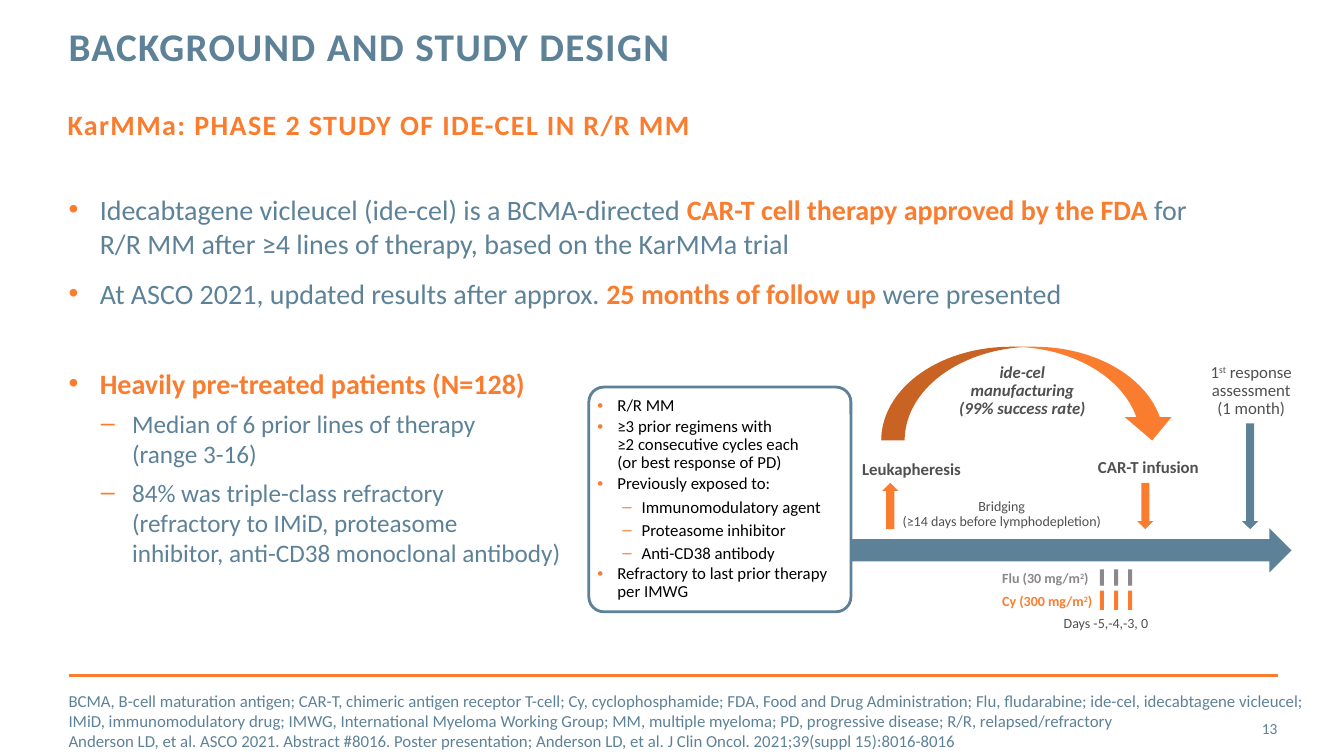
import pptx
import pptx.util
import pptx.dml.color
import pptx.enum.shapes
import pptx.enum.text
import pptx.oxml.ns
import lxml.etree

Inches, Pt = pptx.util.Inches, pptx.util.Pt
RGBColor = pptx.dml.color.RGBColor
SHAPE = pptx.enum.shapes.MSO_SHAPE
ALIGN = pptx.enum.text.PP_ALIGN
MIDDLE = pptx.enum.text.MSO_ANCHOR.MIDDLE
qn = pptx.oxml.ns.qn

BLUE = RGBColor(0x5D, 0x82, 0x98)
ORANGE = RGBColor(0xFA, 0x7C, 0x2E)
DARK = RGBColor(0x50, 0x50, 0x50)
GREY = RGBColor(0x8B, 0x87, 0x8B)
BLACK = RGBColor(0, 0, 0)
WHITE = RGBColor(255, 255, 255)

deck = pptx.Presentation()
deck.slide_width, deck.slide_height = Inches(13.33), Inches(7.5)
page = deck.slides.add_slide(deck.slide_layouts[6])


def write(target, text, size=12, color=DARK, bold=False, italic=False, spacing=None,
          align=ALIGN.LEFT, line=None, before=0, bullet=None, indent=0, hang=0,
          anchor=None, inset=0):
    """Add a paragraph to a shape, or to a new text box if target is (left, top, width, height).

    In text, *stars* enclose bold orange words, ^carets^ enclose superscripts.
    """
    if isinstance(target, tuple):
        target = page.shapes.add_textbox(*map(Inches, target))
    frame = target.text_frame
    para = frame.paragraphs[0]
    if para.runs:
        para = frame.add_paragraph()
    else:
        frame.word_wrap = True
        frame.margin_left = frame.margin_right = Inches(inset)
        frame.margin_top = frame.margin_bottom = Inches(inset)
        if anchor is not None:
            frame.vertical_anchor = anchor
    para.alignment = align
    para.space_before = Pt(before)
    if line:
        para.line_spacing = line
    if bullet:
        props = para._p.get_or_add_pPr()
        props.set("marL", str(Inches(indent)))
        props.set("indent", str(-Inches(hang)))
        tint = lxml.etree.SubElement(props, qn("a:buClr"))
        lxml.etree.SubElement(tint, qn("a:srgbClr"), val=str(ORANGE))
        lxml.etree.SubElement(props, qn("a:buFont"), typeface="Arial")
        lxml.etree.SubElement(props, qn("a:buChar"), char=bullet)

    for i, star_part in enumerate(text.split("*")):
        for j, part in enumerate(star_part.split("^")):
            for k, words in enumerate(part.split("\n")):
                if k:
                    para.add_line_break()
                if not words:
                    continue
                span = para.add_run()
                span.text = words
                font = span.font
                font.name, font.size, font.italic = "Calibri", Pt(size), italic
                font.bold = bold or i % 2 == 1
                font.color.rgb = ORANGE if i % 2 else color
                if spacing:
                    span._r.get_or_add_rPr().set("spc", str(spacing * 100))
                if j % 2:
                    span._r.get_or_add_rPr().set("baseline", "30000")
    return target


def add_block(kind, left, top, width, height, fill):
    block = page.shapes.add_shape(kind, *map(Inches, (left, top, width, height)))
    block.shadow.inherit = False
    block.fill.solid()
    block.fill.fore_color.rgb = fill
    block.line.fill.background()
    return block


# Headings and footer
rule = page.shapes.add_connector(pptx.enum.shapes.MSO_CONNECTOR.STRAIGHT, Inches(0.68),
                                 Inches(6.7), Inches(12.68), Inches(6.7))
rule.line.color.rgb = ORANGE
rule.line.width = Pt(2)
lxml.etree.SubElement(rule._element.spPr, qn("a:effectLst"))

write((0.68, 0.27, 9.56, 0.57), "BACKGROUND AND STUDY DESIGN", size=28, color=BLUE,
      bold=True, spacing=1, line=Pt(30))
write((0.67, 1.07, 12, 0.77), "KarMMa: PHASE 2 STUDY OF IDE-CEL IN R/R MM", size=20,
      color=ORANGE, bold=True, spacing=1)
write((11.81, 7.03, 0.86, 0.4), "13", size=11, color=BLUE, align=ALIGN.RIGHT, anchor=MIDDLE)
footer = write(
    (0.68, 6.95, 12.4, 0.4),
    "BCMA, B-cell maturation antigen; CAR-T, chimeric antigen receptor T-cell; "
    "Cy, cyclophosphamide; FDA, Food and Drug Administration; Flu, fludarabine; "
    "ide-cel, idecabtagene vicleucel; IMiD, immunomodulatory drug; "
    "IMWG, International Myeloma Working Group; MM, multiple myeloma; "
    "PD, progressive disease; R/R, relapsed/refractory", color=BLUE, anchor=MIDDLE)
write(footer, "Anderson LD, et al. ASCO 2021. Abstract #8016. Poster presentation; "
      "Anderson LD, et al. J Clin Oncol. 2021;39(suppl 15):8016-8016", color=BLUE)

# Main bullets
body = (0.68, 1.91, 12, 4.6)
for text, before in (
    ("Idecabtagene vicleucel (ide-cel) is a BCMA-directed *CAR-T cell therapy approved by "
     "the FDA *for\nR/R MM after ≥4 lines of therapy, based on the KarMMa trial", 0),
    ("At ASCO 2021, updated results after approx. *25 months of follow up *were presented", 12),
    ("*Heavily pre-treated patients (N=128)*", 40),
):
    body = write(body, text, size=20, color=BLUE, before=before, bullet="•",
                 indent=0.31, hang=0.31)
for text in (
    "Median of 6 prior lines of therapy\n(range 3-16)",
    "84% was triple-class refractory\n(refractory to IMiD, proteasome\n"
    "inhibitor, anti-CD38 monoclonal antibody)",
):
    write(body, text, size=18, color=BLUE, before=6, bullet="–", indent=0.63, hang=0.31)

# Eligibility box
criteria = add_block(SHAPE.ROUNDED_RECTANGLE, 5.84, 3.84, 2.6, 2.23, WHITE)
criteria.adjustments[0] = 0.067
criteria.line.color.rgb = BLUE
criteria.line.width = Pt(2)
top_level = dict(bullet="•", indent=0.2, hang=0.2, line=0.9)
sub_level = dict(bullet="–", indent=0.44, hang=0.19)
for number, (text, level) in enumerate((
    ("R/R MM", top_level),
    ("≥3 prior regimens with\n≥2 consecutive cycles each\n(or best response of PD)", top_level),
    ("Previously exposed to:", top_level),
    ("Immunomodulatory agent", sub_level),
    ("Proteasome inhibitor", sub_level),
    ("Anti-CD38 antibody", sub_level),
    ("Refractory to last prior therapy\nper IMWG", top_level),
)):
    write(criteria, text, color=BLACK, before=2 if number else 0, anchor=MIDDLE,
          inset=0.04, **level)

# Timeline labels
for place, text, style in (
    ((9.17, 3.61, 1.94, 0.55), "ide-cel\nmanufacturing\n(99% success rate)",
     dict(bold=True, italic=True, align=ALIGN.CENTER)),
    ((8.55, 4.57, 1.94, 0.18), "Leukapheresis", dict(bold=True)),
    ((10.89, 4.55, 1.94, 0.18), "CAR-T infusion", dict(bold=True)),
    ((11.74, 3.61, 1.34, 0.55), "1^st^ response\nassessment\n(1 month)",
     dict(align=ALIGN.CENTER)),
    ((9.94, 5.67, 0.98, 0.15), "Flu (30 mg/m^2^)", dict(size=10, color=GREY, bold=True)),
    ((9.94, 5.9, 0.98, 0.15), "Cy (300 mg/m^2^)", dict(size=10, color=ORANGE, bold=True)),
    ((10.55, 6.12, 1.19, 0.15), "Days -5,-4,-3, 0", dict(size=10)),
    ((8.91, 4.95, 2.05, 0.3), "Bridging\n(≥14 days before lymphodepletion)",
     dict(size=10, align=ALIGN.CENTER)),
):
    write(place, text, line=0.9, **style)

# Timeline arrows and dosing days
add_block(SHAPE.UP_ARROW, 8.75, 4.79, 0.16, 0.46, ORANGE)
add_block(SHAPE.DOWN_ARROW, 11.28, 4.79, 0.16, 0.46, ORANGE)
add_block(SHAPE.DOWN_ARROW, 12.32, 4.2, 0.16, 1.05, BLUE)
for day in range(3):
    for top, height, color in ((5.86, 0.19, ORANGE), (5.65, 0.16, GREY)):
        add_block(SHAPE.RECTANGLE, 10.91 + 0.14 * day, top, 0.04, height, color)
add_block(SHAPE.RIGHT_ARROW, 8.45, 5.24, 4.36, 0.44, BLUE)
add_block(SHAPE.CURVED_DOWN_ARROW, 8.74, 3.44, 2.92, 0.93, ORANGE)

deck.save("out.pptx")
